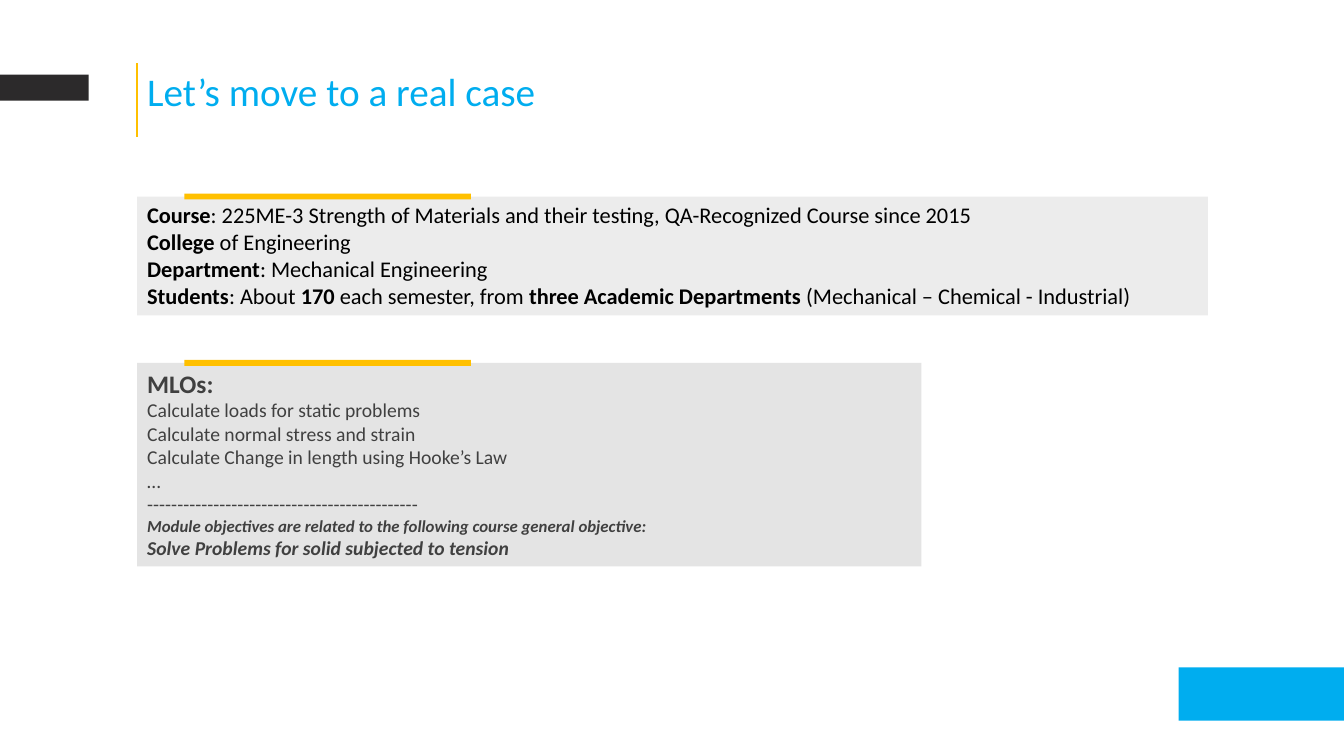
from pptx import Presentation
from pptx.dml.color import RGBColor as RGB
from pptx.enum.shapes import MSO_CONNECTOR as Conn, MSO_SHAPE as Shape
from pptx.enum.text import MSO_ANCHOR as Anchor, MSO_AUTO_SIZE as Fit, PP_ALIGN as Align
from pptx.oxml.ns import qn
from pptx.util import Inches, Pt

COLORS = {
    "blue": "00ADEF", "gold": "FFC000", "dark": "2C2A2B", "gray": "404040",
    "black": "000000", "pale": "ECECEC", "mist": "E4E4E4",
}
LEFT = 1.36

# Text between asterisks is bold; each line carries its own format values.
COURSE = [(text, {"size": Pt(16)}) for text in (
    "*Course*: 225ME-3 Strength of Materials and their testing, QA-Recognized Course since 2015",
    "*College* of Engineering",
    "*Department*: Mechanical Engineering",
    "*Students*: About *170* each semester, from *three Academic Departments *"
    "(Mechanical – Chemical - Industrial)",
)]
GOALS = [
    ("*MLOs:*", {"size": Pt(18)}),
    *[(text, {"size": Pt(14)}) for text in (
        "Calculate loads for static problems",
        "Calculate normal stress and strain",
        "Calculate Change in length using Hooke’s Law",
        "…",
        "-" * 45,
    )],
    ("*Module objectives are related to the following course general objective:*",
     {"size": Pt(12), "italic": True}),
    ("*Solve Problems for solid subjected to tension*", {"size": Pt(14), "italic": True}),
]


def paint(fill, color):
    fill.solid()
    fill.fore_color.rgb = RGB.from_string(COLORS[color])


def place(shape, left, top, width, height):
    shape.left, shape.top = Inches(left), Inches(top)
    shape.width, shape.height = Inches(width), Inches(height)


def add_bar(slide, left, top, width, height, color):
    bar = slide.shapes.add_shape(
        Shape.RECTANGLE, Inches(left), Inches(top), Inches(width), Inches(height))
    bar.shadow.inherit = False
    paint(bar.fill, color)
    bar.line.fill.background()
    return bar


def add_rule(slide, left, top, bottom, color):
    rule = slide.shapes.add_connector(
        Conn.STRAIGHT, Inches(left), Inches(top), Inches(left), Inches(bottom))
    rule.line.width = Pt(1)
    paint(rule.line.fill, color)
    props = rule._element.spPr
    props.append(props.makeelement(qn("a:effectLst"), {}))


def write(shape, lines, color):
    """Fill the shape with flush-left lines without bullets."""
    frame = shape.text_frame
    frame.word_wrap = True
    frame.auto_size = Fit.NONE
    frame.vertical_anchor = Anchor.TOP
    for i, (text, style) in enumerate(lines):
        para = frame.add_paragraph() if i else frame.paragraphs[0]
        props = para._p.get_or_add_pPr()
        props.set("marL", "0")
        props.set("indent", "0")
        props.append(props.makeelement(qn("a:buNone"), {}))
        para.alignment = Align.LEFT
        para.space_before = Pt(0)
        for j, part in enumerate(text.split("*")):
            if not part:
                continue
            run = para.add_run()
            run.text = part
            for key, value in {"name": "Calibri", "bold": j % 2 == 1, **style}.items():
                setattr(run.font, key, value)
            run.font.color.rgb = RGB.from_string(COLORS[color])


def main():
    deck = Presentation()
    deck.slide_width, deck.slide_height = Inches(13.33), Inches(7.5)
    slide = deck.slides.add_slide(deck.slide_layouts[1])

    title, body = slide.placeholders
    place(title, LEFT, 0.62, 4.29, 0.57)
    write(title, [("Let’s move to a real case", {"size": Pt(28)})], "blue")

    place(body, LEFT, 3.6, 7.78, 2.02)
    paint(body.fill, "mist")
    write(body, GOALS, "gray")

    course = add_bar(slide, LEFT, 1.95, 10.62, 1.18, "pale")
    write(course, COURSE, "black")

    add_rule(slide, LEFT, 0.63, 1.36, "gold")
    add_bar(slide, 0, 0.74, 0.88, 0.26, "dark")
    add_bar(slide, 11.69, 6.62, 1.64, 0.53, "blue")
    for top in (1.92, 3.57):
        add_bar(slide, 1.83, top, 2.84, 0.06, "gold")

    deck.save("out.pptx")


if __name__ == "__main__":
    main()
